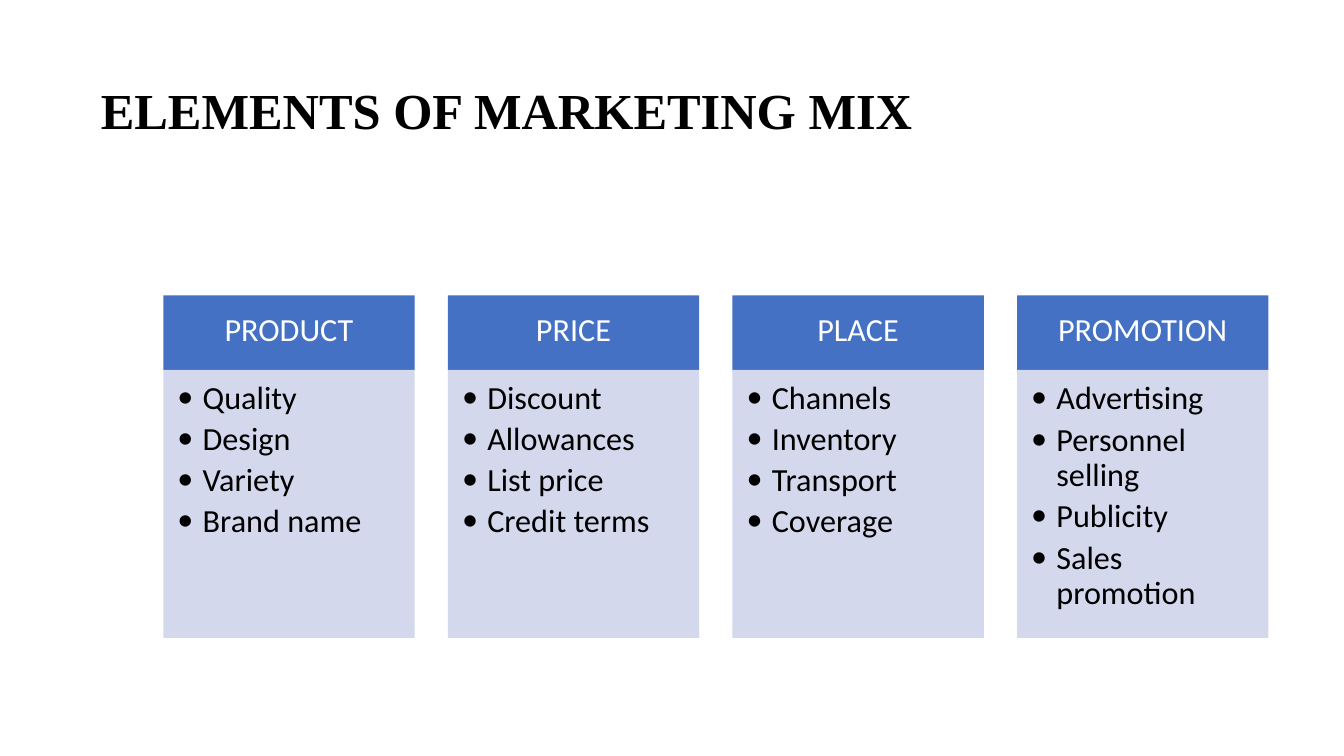
from dataclasses import dataclass

import lxml.etree
import pptx
import pptx.dml.color
import pptx.enum.shapes
import pptx.enum.text
import pptx.oxml.ns
import pptx.util

Inches = pptx.util.Inches
Pt = pptx.util.Pt
qn = pptx.oxml.ns.qn
ALIGN = pptx.enum.text.PP_ALIGN
ANCHOR = pptx.enum.text.MSO_ANCHOR


@dataclass(frozen=True)
class Theme:
    heading_fill: str = "4471C4"
    list_fill: str = "CFD4EA"
    light_text: str = "FFFFFF"
    dark_text: str = "000000"
    title_font: str = "Times New Roman"
    text_font: str = "Calibri"
    title_size: int = 36
    text_size: int = 23


THEME = Theme()

MARKETING_MIX = {
    "PRODUCT": ["Quality", "Design", "Variety", "Brand name"],
    "PRICE": ["Discount", "Allowances", "List price", "Credit terms"],
    "PLACE": ["Channels", "Inventory", "Transport", "Coverage"],
    "PROMOTION": ["Advertising", "Personnel  selling", "Publicity", "Sales promotion"],
}
WRAPPED_ITEMS = {"Personnel  selling", "Sales promotion"}


def rgb(color):
    return pptx.dml.color.RGBColor.from_string(color)


def add_run(paragraph, text, font, size, color, bold=False):
    run = paragraph.add_run()
    run.text = text
    run.font.name = font
    run.font.size = Pt(size)
    run.font.color.rgb = rgb(color)
    run.font.bold = bold


def prepare_frame(frame, top_inset, anchor, right_inset=0):
    frame.word_wrap = True
    frame.auto_size = pptx.enum.text.MSO_AUTO_SIZE.NONE
    frame.vertical_anchor = anchor
    frame.margin_left = frame.margin_bottom = 0
    frame.margin_top = Inches(top_inset)
    frame.margin_right = Inches(right_inset)


def add_panel(slide, left, top, width, height, fill):
    panel = slide.shapes.add_shape(
        pptx.enum.shapes.MSO_SHAPE.RECTANGLE,
        Inches(left), Inches(top), Inches(width), Inches(height))
    panel.shadow.inherit = False
    panel.fill.solid()
    panel.fill.fore_color.rgb = rgb(fill)
    panel.line.fill.background()
    return panel


def set_opacity(panel, percent):
    color = panel.fill._xPr.find(qn("a:solidFill"))[0]
    lxml.etree.SubElement(color, qn("a:alpha"), val=str(percent * 1000))


def add_bullet(paragraph, indent, hanging):
    properties = paragraph._p.get_or_add_pPr()
    properties.set("marL", str(Inches(indent)))
    properties.set("indent", str(-Inches(hanging)))
    lxml.etree.SubElement(properties, qn("a:buFont"), typeface=THEME.text_font)
    lxml.etree.SubElement(properties, qn("a:buChar"), char="•")


def fill_title(slide, left, top, width, height):
    title = slide.shapes.title
    title.left, title.top = Inches(left), Inches(top)
    title.width, title.height = Inches(width), Inches(height)
    prepare_frame(title.text_frame, 0.01, ANCHOR.BOTTOM)
    heading = title.text_frame.paragraphs[0]
    heading.alignment = ALIGN.LEFT
    add_run(heading, "ELEMENTS OF MARKETING MIX", THEME.title_font,
            THEME.title_size, THEME.dark_text, bold=True)


def add_element_column(slide, element, items, left, top, width, height):
    """Place a heading bar with its bulleted list panel below."""
    heading_height = 0.74
    heading = add_panel(slide, left, top, width, heading_height, THEME.heading_fill)
    prepare_frame(heading.text_frame, 0.14, ANCHOR.TOP)
    label = heading.text_frame.paragraphs[0]
    label.alignment = ALIGN.CENTER
    add_run(label, element, THEME.text_font, THEME.text_size, THEME.light_text)

    details = add_panel(slide, left, top + heading_height, width,
                        height - heading_height, THEME.list_fill)
    set_opacity(details, 90)
    frame = details.text_frame
    prepare_frame(frame, 0.07, ANCHOR.TOP, right_inset=0.1)
    for index, item in enumerate(items):
        entry = frame.paragraphs[0] if index == 0 else frame.add_paragraph()
        entry.alignment = ALIGN.LEFT
        if item in WRAPPED_ITEMS:
            entry.line_spacing = Pt(25.2)
            entry.space_before = Pt(4.8)
        elif index:
            entry.space_before = Pt(1.8)
        add_bullet(entry, 0.39, 0.25)
        add_run(entry, item, THEME.text_font, THEME.text_size, THEME.dark_text)


def add_marketing_mix(slide, left, top, width, height):
    gap = 0.33
    count = len(MARKETING_MIX)
    column_width = (width - gap * (count - 1)) / count
    for index, (element, items) in enumerate(MARKETING_MIX.items()):
        add_element_column(slide, element, items,
                           left + index * (column_width + gap), top,
                           column_width, height)


def main():
    deck = pptx.Presentation()
    deck.slide_width, deck.slide_height = Inches(13.33), Inches(7.5)
    slide = deck.slides.add_slide(deck.slide_layouts.get_by_name("Title Only"))
    fill_title(slide, 1, 0.76, 8.09, 0.63)
    add_marketing_mix(slide, 1.62, 2.93, 10.96, 3.4)
    deck.save("out.pptx")


if __name__ == "__main__":
    main()
